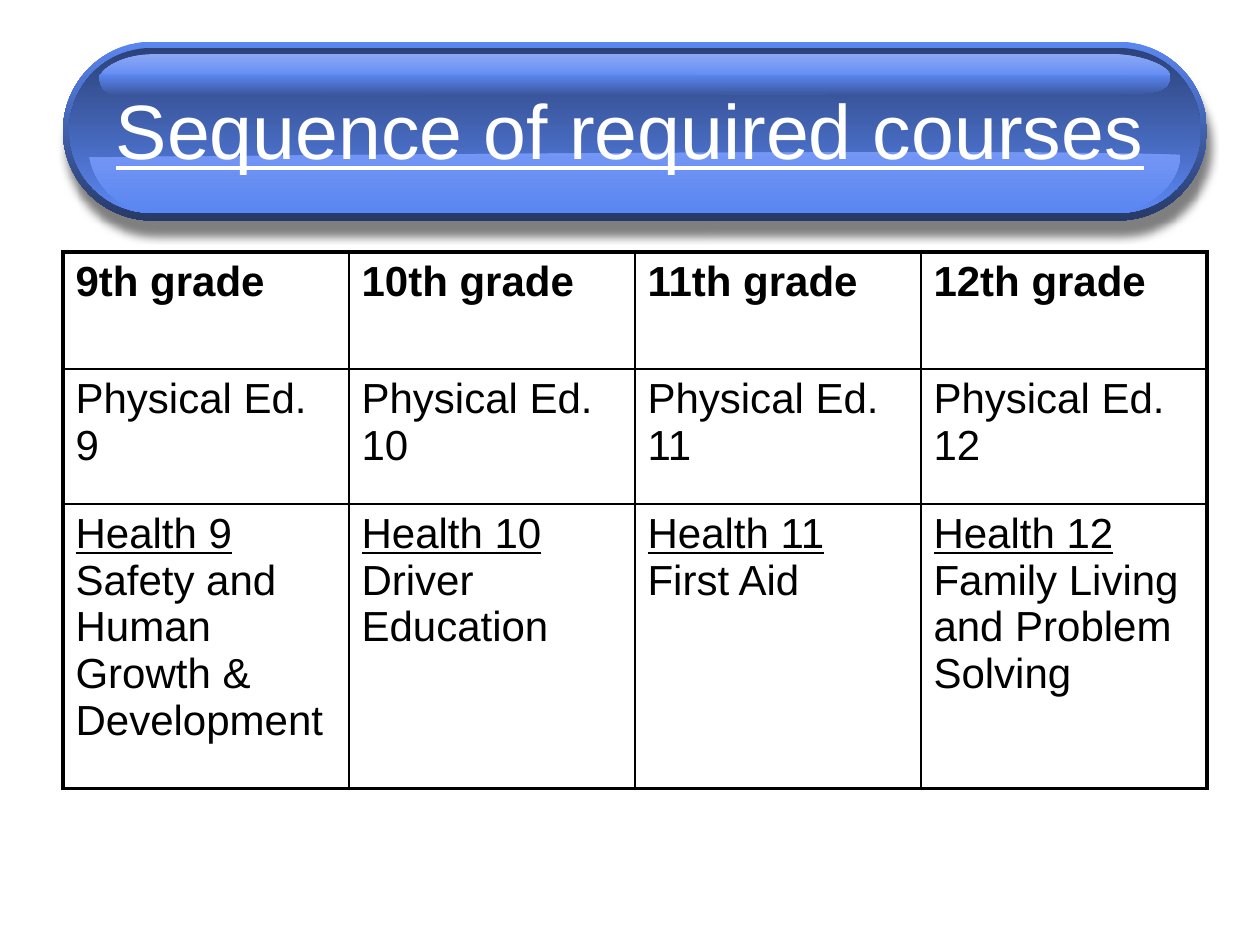
"""Build a slide with a glossy title bar above a table of required courses."""
from typing import NamedTuple

from lxml import etree
from pptx import Presentation
from pptx.dml.color import RGBColor
from pptx.enum.shapes import MSO_SHAPE
from pptx.enum.text import MSO_ANCHOR, PP_ALIGN
from pptx.oxml import parse_xml
from pptx.oxml.ns import nsdecls, qn
from pptx.util import Inches, Pt

ROUNDED = MSO_SHAPE.ROUNDED_RECTANGLE
MIDDLE = MSO_ANCHOR.MIDDLE
CENTER = PP_ALIGN.CENTER
FONT = "Arial"
TITLE_ONLY = 5
THIN, THICK = 1, 2.25
COLORS = {
    "blue": "5B87F2",
    "navy": "273A67",
    "deep": "2C4279",
    "mid": "3A559A",
    "pale": "8CA8F6",
    "soft": "7698F5",
    "black": "000000",
    "white": "FFFFFF",
}


class Pill(NamedTuple):
    left: float
    top: float
    width: float
    height: float
    upper: str
    lower: str


class Gloss(NamedTuple):
    start: tuple
    segments: list
    upper: str
    lower: str


class Course(NamedTuple):
    grade: int
    health: str


PILLS = [
    Pill(0.5, 0.33, 9.08, 1.42, "blue", "navy"),
    Pill(0.55, 0.38, 8.98, 1.31, "deep", "blue"),
]
GLOSSES = [
    Gloss((0.79, 0.61), [
        [(0.84, 0.5), (1.05, 0.43), (1.21, 0.43)],
        [(8.88, 0.43)],
        [(9.03, 0.44), (9.28, 0.51), (9.29, 0.61)],
        [(7.94, 0.64), (0.79, 0.61), (0.79, 0.61)],
    ], "pale", "blue"),
    Gloss((0.79, 0.59), [
        [(0.78, 0.72), (0.86, 0.76), (1.02, 0.76)],
        [(9.06, 0.74)],
        [(9.21, 0.73), (9.28, 0.71), (9.29, 0.6)],
        [(0.79, 0.59)],
    ], "blue", "mid"),
    Gloss((0.71, 1.25), [
        [(0.76, 1.5), (0.97, 1.66), (1.14, 1.67)],
        [(8.95, 1.67)],
        [(9.1, 1.64), (9.36, 1.48), (9.37, 1.23)],
        [(8, 1.17), (0.71, 1.25), (0.71, 1.25)],
    ], "soft", "blue"),
]
COURSES = [
    Course(9, "Safety and Human Growth & Development"),
    Course(10, "Driver Education"),
    Course(11, "First Aid"),
    Course(12, "Family Living and Problem Solving"),
]
ROW_HEIGHTS = [0.93, 1.07, 2.26]


def rgb(name: str) -> RGBColor:
    """Look up a colour by name."""
    return RGBColor.from_string(COLORS[name])


def paint(sp, upper: str, lower: str) -> None:
    """Fill a shape with a downward gradient and no outline."""
    sp.shadow.inherit = False
    sp.line.fill.background()
    sp.fill.gradient()
    sp.fill.gradient_angle = 270
    for stop, name in zip(sp.fill.gradient_stops, (upper, lower)):
        stop.color.rgb = rgb(name)


def add_pill(s, pill: Pill):
    """Draw a fully rounded bar."""
    sp = s.shapes.add_shape(ROUNDED, *map(Inches, pill[:4]))
    sp.adjustments[0] = 0.5
    paint(sp, pill.upper, pill.lower)
    return sp


def add_drop_shadow(sp) -> None:
    """Give a shape a soft shadow below it."""
    effects = sp._element.spPr.find(qn("a:effectLst"))
    effects.append(parse_xml(
        f'<a:outerShdw {nsdecls("a")} blurRad="{Pt(5)}" dist="{Pt(9.2)}" '
        f'dir="{77 * 60000}" algn="ctr" rotWithShape="0">'
        f'<a:srgbClr val="{COLORS["black"]}"><a:alpha val="50000"/></a:srgbClr>'
        '</a:outerShdw>'))


def bend_segments(sp, segments: list) -> None:
    """Turn each run of three outline points into one cubic curve."""
    lines = iter(list(sp._element.iter(qn("a:lnTo"))))
    for segment in segments:
        parts = [next(lines) for _ in segment]
        if len(parts) == 3:
            curve = etree.Element(qn("a:cubicBezTo"))
            parts[0].addprevious(curve)
            for part in parts:
                curve.append(part[0])
                part.getparent().remove(part)


def add_gloss(s, gloss: Gloss) -> None:
    """Draw a curved highlight."""
    points = [point for segment in gloss.segments for point in segment]
    builder = s.shapes.build_freeform(*map(Inches, gloss.start))
    builder.add_line_segments([(Inches(x), Inches(y)) for x, y in points], close=True)
    sp = builder.convert_to_shape()
    bend_segments(sp, gloss.segments)
    paint(sp, gloss.upper, gloss.lower)


def add_title(s, text: str) -> None:
    """Place the title over the bar."""
    sp = s.shapes.title
    sp.left, sp.top, sp.width, sp.height = map(Inches, (0.75, 0.4, 8.5, 1.25))
    s.shapes._spTree.append(sp._element)
    tf = sp.text_frame
    tf.text = text
    tf.vertical_anchor = MIDDLE
    p = tf.paragraphs[0]
    p.alignment = CENTER
    font = p.runs[0].font
    font.name, font.size, font.underline = FONT, Pt(44), True
    font.color.rgb = rgb("white")


def set_borders(cell, widths: dict) -> None:
    """Draw the sides of a cell in black."""
    tc_pr = cell._tc.get_or_add_tcPr()
    for side, width in widths.items():
        ln = etree.SubElement(tc_pr, qn(f"a:ln{side}"), w=str(Pt(width)))
        ln.append(parse_xml(
            f'<a:solidFill {nsdecls("a")}><a:srgbClr val="{COLORS["black"]}"/></a:solidFill>'))


def fill_cell(cell, text: str, bold: bool, underline_first: bool) -> None:
    """Write a cell and format its runs."""
    cell.fill.background()
    cell.text_frame.text = text
    for i, p in enumerate(cell.text_frame.paragraphs):
        font = p.runs[0].font
        font.name, font.size, font.bold = FONT, Pt(24), bold
        font.underline = underline_first and i == 0
        font.color.rgb = rgb("black")


def add_course_table(s) -> None:
    """Build the table with one column per grade."""
    rows = [
        [f"{c.grade}th grade" for c in COURSES],
        [f"Physical Ed. {c.grade}" for c in COURSES],
        [f"Health {c.grade}\n{c.health}" for c in COURSES],
    ]
    last_row, last_col = len(rows) - 1, len(COURSES) - 1
    table = s.shapes.add_table(len(rows), len(COURSES), Inches(0.5), Inches(2),
                               Inches(9.08), Inches(sum(ROW_HEIGHTS))).table
    table.first_row = table.horz_banding = False
    for i, texts in enumerate(rows):
        table.rows[i].height = Inches(ROW_HEIGHTS[i])
        for j, text in enumerate(texts):
            cell = table.cell(i, j)
            set_borders(cell, {
                "L": THICK if j == 0 else THIN,
                "R": THICK if j == last_col else THIN,
                "T": THICK if i == 0 else THIN,
                "B": THICK if i == last_row else THIN,
            })
            fill_cell(cell, text, i == 0, i == last_row)


def main() -> None:
    """Assemble and save the slide."""
    prs = Presentation()
    prs.slide_width, prs.slide_height = Inches(10), Inches(7.5)
    s = prs.slides.add_slide(prs.slide_layouts[TITLE_ONLY])
    bars = [add_pill(s, pill) for pill in PILLS]
    add_drop_shadow(bars[0])
    for gloss in GLOSSES:
        add_gloss(s, gloss)
    add_title(s, "Sequence of required courses")
    add_course_table(s)
    prs.save("out.pptx")


if __name__ == "__main__":
    main()
